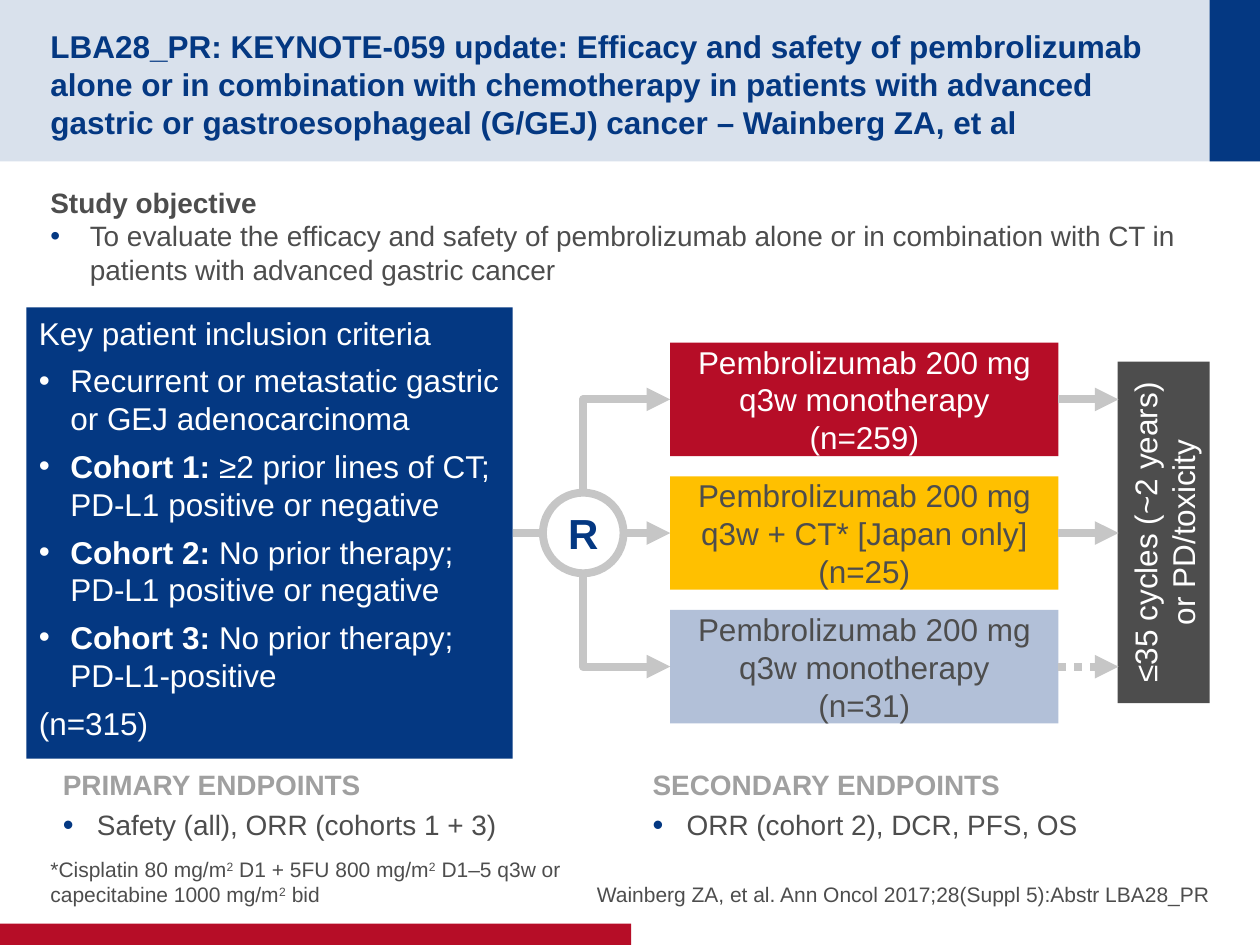
from dataclasses import dataclass

from lxml.etree import SubElement
from pptx import Presentation
from pptx.dml.color import RGBColor
from pptx.enum.dml import MSO_LINE
from pptx.enum.shapes import MSO_CONNECTOR, MSO_SHAPE
from pptx.enum.text import MSO_ANCHOR, MSO_AUTO_SIZE, PP_ALIGN
from pptx.oxml.ns import qn
from pptx.util import Pt


@dataclass(frozen=True)
class Theme:
    font: str = "Arial"
    navy: str = "043882"
    pale_navy: str = "D9E1EC"
    red: str = "B60D27"
    yellow: str = "FFC000"
    light_blue: str = "B2C0D8"
    dark_gray: str = "4D4D4D"
    heading_gray: str = "A0A0A0"
    line_gray: str = "C6C6C6"
    white: str = "FFFFFF"
    note_size: int = 12
    body_size: int = 16
    large_size: int = 18
    symbol_size: int = 24


theme = Theme()


def style_paragraph(paragraph, size, color, bold=False, align=PP_ALIGN.LEFT,
                    after=0, indent=0, bullet_color=None, bullet_percent=100):
    """Format a paragraph and its runs; bold=None leaves each run's weight alone."""
    paragraph.alignment = align
    paragraph.space_before = Pt(0)
    paragraph.space_after = Pt(after)
    properties = paragraph._p.get_or_add_pPr()
    properties.set("marL", str(Pt(indent)))
    properties.set("indent", str(-Pt(indent)))
    if bullet_color:
        fill = SubElement(properties, qn("a:buClr"))
        SubElement(fill, qn("a:srgbClr"), val=bullet_color)
        SubElement(properties, qn("a:buSzPct"), val=str(bullet_percent * 1000))
        SubElement(properties, qn("a:buFont"), typeface=theme.font)
        SubElement(properties, qn("a:buChar"), char="•")
    else:
        SubElement(properties, qn("a:buNone"))
    for run in paragraph.runs:
        run.font.name = theme.font
        run.font.size = Pt(size)
        run.font.color.rgb = RGBColor.from_string(color)
        if bold is not None:
            run.font.bold = bold


def style_line(shape, arrow=None):
    """Apply the gray stroke; arrow is "headEnd" (start), "tailEnd" (finish) or None."""
    shape.line.color.rgb = RGBColor.from_string(theme.line_gray)
    shape.line.width = Pt(4.5)
    properties = shape._element.spPr
    if arrow:
        SubElement(properties.find(qn("a:ln")), qn(f"a:{arrow}"), type="triangle")
    if properties.find(qn("a:effectLst")) is None:
        SubElement(properties, qn("a:effectLst"))


presentation = Presentation()
presentation.slide_width = Pt(720)
presentation.slide_height = Pt(540)
slide = presentation.slides.add_slide(presentation.slide_layouts[1])
shapes = slide.shapes
title, objective = shapes.title, slide.placeholders[1]

# Header and footer bands, behind the placeholders
bands = [
    (0, 0, 720, 92.2, theme.pale_navy),
    (691.2, 0, 28.8, 92.2, theme.navy),
    (0, 527.8, 360.7, 12.2, theme.red),
]
for position, (left, top, width, height, color) in enumerate(bands):
    band = shapes.add_shape(MSO_SHAPE.RECTANGLE, Pt(left), Pt(top), Pt(width), Pt(height))
    band.shadow.inherit = False
    band.fill.solid()
    band.fill.fore_color.rgb = RGBColor.from_string(color)
    band.line.fill.background()
    title._element.addprevious(band._element)

# Title and study objective
placeholders = [
    (title, 14.4, 648.7, 63.4, MSO_ANCHOR.MIDDLE, 0, 0),
    (objective, 102.2, 661.7, 65.5, MSO_ANCHOR.TOP, 7.2, 3.6),
]
for shape, top, width, height, anchor, right_inset, bottom_inset in placeholders:
    shape.left, shape.top, shape.width, shape.height = Pt(28.8), Pt(top), Pt(width), Pt(height)
    frame = shape.text_frame
    frame.word_wrap = True
    frame.auto_size = MSO_AUTO_SIZE.NONE
    frame.vertical_anchor = anchor
    frame.margin_left, frame.margin_top = Pt(0), Pt(3.6)
    frame.margin_right, frame.margin_bottom = Pt(right_inset), Pt(bottom_inset)

title.text_frame.text = (
    "LBA28_PR: KEYNOTE-059 update: Efficacy and safety of pembrolizumab alone or in "
    "combination with chemotherapy in patients with advanced gastric or "
    "gastroesophageal (G/GEJ) cancer – Wainberg ZA, et al")
style_paragraph(title.text_frame.paragraphs[0], theme.large_size, theme.navy, bold=True)

objective.text_frame.text = (
    "Study objective\n"
    "To evaluate the efficacy and safety of pembrolizumab alone or in combination "
    "with CT in patients with advanced gastric cancer")
heading, aim = objective.text_frame.paragraphs
style_paragraph(heading, theme.body_size, theme.dark_gray, bold=True)
style_paragraph(aim, theme.body_size, theme.dark_gray, indent=22.5, bullet_color=theme.navy)

# Inclusion criteria: bold label, then the lines of the text
criteria = [
    ("", ["Key patient inclusion criteria"]),
    ("", ["Recurrent or metastatic gastric or GEJ adenocarcinoma"]),
    ("Cohort 1: ", ["≥2 prior lines of CT; PD-L1 positive or negative"]),
    ("Cohort 2: ", ["No prior therapy; ", "PD-L1 positive or negative"]),
    ("Cohort 3: ", ["No prior therapy; ", "PD-L1-positive"]),
    ("", ["(n=315)"]),
]
criteria_box = shapes.add_shape(
    MSO_SHAPE.ROUNDED_RECTANGLE, Pt(15.1), Pt(175.7), Pt(277.9), Pt(257.8))
criteria_box.adjustments[0] = 0
criteria_box.shadow.inherit = False
criteria_box.fill.solid()
criteria_box.fill.fore_color.rgb = RGBColor.from_string(theme.navy)
criteria_box.line.fill.background()
frame = criteria_box.text_frame
frame.word_wrap = True
frame.vertical_anchor = MSO_ANCHOR.TOP
for index, (label, lines) in enumerate(criteria):
    paragraph = frame.add_paragraph() if index else frame.paragraphs[0]
    if label:
        run = paragraph.add_run()
        run.text = label
        run.font.bold = True
    for number, line in enumerate(lines):
        if number:
            paragraph.add_line_break()
        paragraph.add_run().text = line
    bulleted = 0 < index < len(criteria) - 1
    style_paragraph(paragraph, theme.large_size, theme.white, bold=None, after=5.7,
                    indent=18 if bulleted else 0,
                    bullet_color=theme.white if bulleted else None)

# Randomisation circle, treatment arms and duration bar
center_x, center_y, radius = 333.3, 304.6, 23.05
arm_left, arm_width, arm_height, arm_pitch = 383, 221.8, 64.8, 76.35
arm_top = center_y - arm_height / 2
bar_left = 639.2
nodes = [
    (MSO_SHAPE.OVAL, center_x - radius, center_y - radius, 2 * radius, 2 * radius,
     None, "R", theme.navy),
    (MSO_SHAPE.RECTANGLE, arm_left, arm_top - arm_pitch, arm_width, arm_height,
     theme.red, "Pembrolizumab 200 mg q3w monotherapy\n(n=259)", theme.white),
    (MSO_SHAPE.RECTANGLE, arm_left, arm_top, arm_width, arm_height,
     theme.yellow, "Pembrolizumab 200 mg q3w + CT* [Japan only]\n(n=25)", theme.dark_gray),
    (MSO_SHAPE.RECTANGLE, arm_left, arm_top + arm_pitch, arm_width, arm_height,
     theme.light_blue, "Pembrolizumab 200 mg q3w monotherapy\n(n=31)", theme.dark_gray),
    (MSO_SHAPE.RECTANGLE, 567.4, 277.9, 195.1, 52.6,
     theme.dark_gray, "≤35 cycles (~2 years) or PD/toxicity", theme.white),
]
node_shapes = []
for kind, left, top, width, height, fill_color, text, text_color in nodes:
    shape = shapes.add_shape(kind, Pt(left), Pt(top), Pt(width), Pt(height))
    shape.shadow.inherit = False
    frame = shape.text_frame
    frame.text = text
    frame.vertical_anchor = MSO_ANCHOR.MIDDLE
    frame.margin_top = frame.margin_bottom = Pt(0)
    is_circle = kind == MSO_SHAPE.OVAL
    frame.word_wrap = not is_circle
    if is_circle:
        shape.fill.background()
        style_line(shape)
    else:
        shape.fill.solid()
        shape.fill.fore_color.rgb = RGBColor.from_string(fill_color)
        shape.line.fill.background()
    for paragraph in frame.paragraphs:
        style_paragraph(paragraph, theme.symbol_size if is_circle else theme.large_size,
                        text_color, bold=is_circle, align=PP_ALIGN.CENTER)
    node_shapes.append(shape)
circle, *arms, duration_bar = node_shapes
duration_bar.rotation = 270

# Elbows run from the outer arms back to the circle: (arm, side, oval connection site)
for arm, side, oval_site in [(arms[0], 0, 0), (arms[2], 2, 4)]:
    elbow = shapes.add_connector(MSO_CONNECTOR.ELBOW, 0, 0, 0, 0)
    elbow.begin_connect(arm, 1)
    elbow.end_connect(circle, side)
    elbow._element.nvCxnSpPr.cNvCxnSpPr.endCxn.idx = oval_site
    elbow._element.spPr.find(qn("a:prstGeom")).set("prst", "bentConnector2")
    style_line(elbow, "headEnd")

entry = shapes.add_connector(MSO_CONNECTOR.STRAIGHT, Pt(293), Pt(center_y),
                             Pt(center_x - radius), Pt(center_y))
entry.begin_connect(criteria_box, 3)
style_line(entry)

middle_arrow = shapes.add_connector(MSO_CONNECTOR.STRAIGHT, Pt(center_x + radius),
                                    Pt(center_y), Pt(arm_left), Pt(center_y))
middle_arrow.end_connect(arms[1], 1)
style_line(middle_arrow, "tailEnd")

for row, arm in enumerate(arms):
    y = center_y + (row - 1) * arm_pitch
    arrow = shapes.add_connector(MSO_CONNECTOR.STRAIGHT, Pt(arm_left + arm_width), Pt(y),
                                 Pt(bar_left), Pt(y))
    arrow.begin_connect(arm, 3)
    if row == 2:
        arrow.line.dash_style = MSO_LINE.ROUND_DOT
    style_line(arrow, "tailEnd")

# Endpoints
endpoints = [
    (28.8, "PRIMARY ENDPOINTS\nSafety (all), ORR (cohorts 1 + 3)"),
    (365.8, "SECONDARY ENDPOINTS\nORR (cohort 2), DCR, PFS, OS"),
]
for left, text in endpoints:
    frame = shapes.add_textbox(Pt(left), Pt(434.9), Pt(325.4), Pt(62.6)).text_frame
    frame.word_wrap = True
    frame.text = text
    heading, item = frame.paragraphs
    style_paragraph(heading, theme.body_size, theme.heading_gray, bold=True, after=4)
    style_paragraph(item, theme.body_size, theme.dark_gray, after=4, indent=19.5,
                    bullet_color=theme.navy, bullet_percent=110)

# Footnote and citation; parts between bars are superscript
notes = [
    (28.8, 325.4, PP_ALIGN.LEFT,
     "*Cisplatin 80 mg/m|2| D1 + 5FU 800 mg/m|2| D1–5 q3w or capecitabine 1000 mg/m|2| bid"),
    (318.2, 373.3, PP_ALIGN.RIGHT,
     "Wainberg ZA, et al. Ann Oncol 2017;28(Suppl 5):Abstr LBA28_PR"),
]
for left, width, align, text in notes:
    frame = shapes.add_textbox(Pt(left), Pt(480.2), Pt(width), Pt(38.2)).text_frame
    frame.word_wrap = True
    frame.vertical_anchor = MSO_ANCHOR.BOTTOM
    frame.margin_left = frame.margin_top = frame.margin_right = frame.margin_bottom = Pt(0)
    paragraph = frame.paragraphs[0]
    for index, part in enumerate(text.split("|")):
        run = paragraph.add_run()
        run.text = part
        if index % 2:
            run.font._element.set("baseline", "30000")
    style_paragraph(paragraph, theme.note_size, theme.dark_gray, align=align, after=4)

presentation.save("out.pptx")
